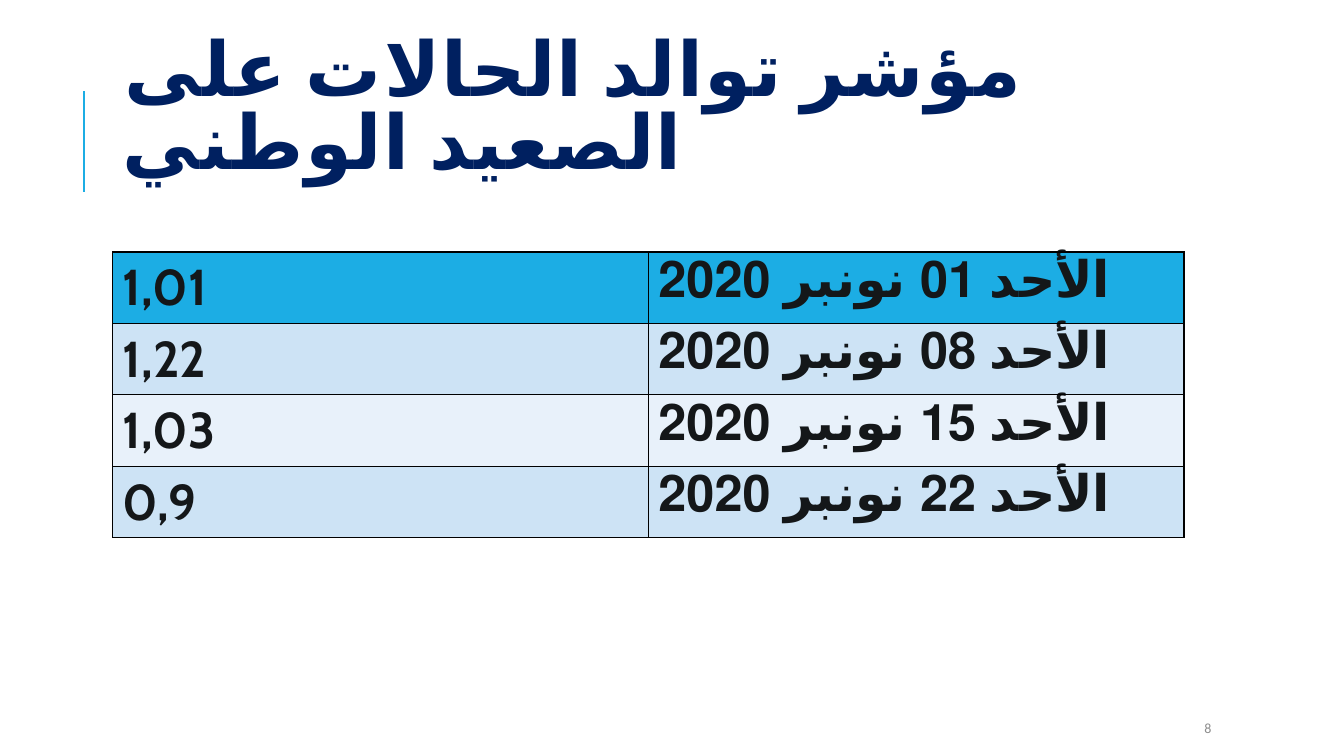
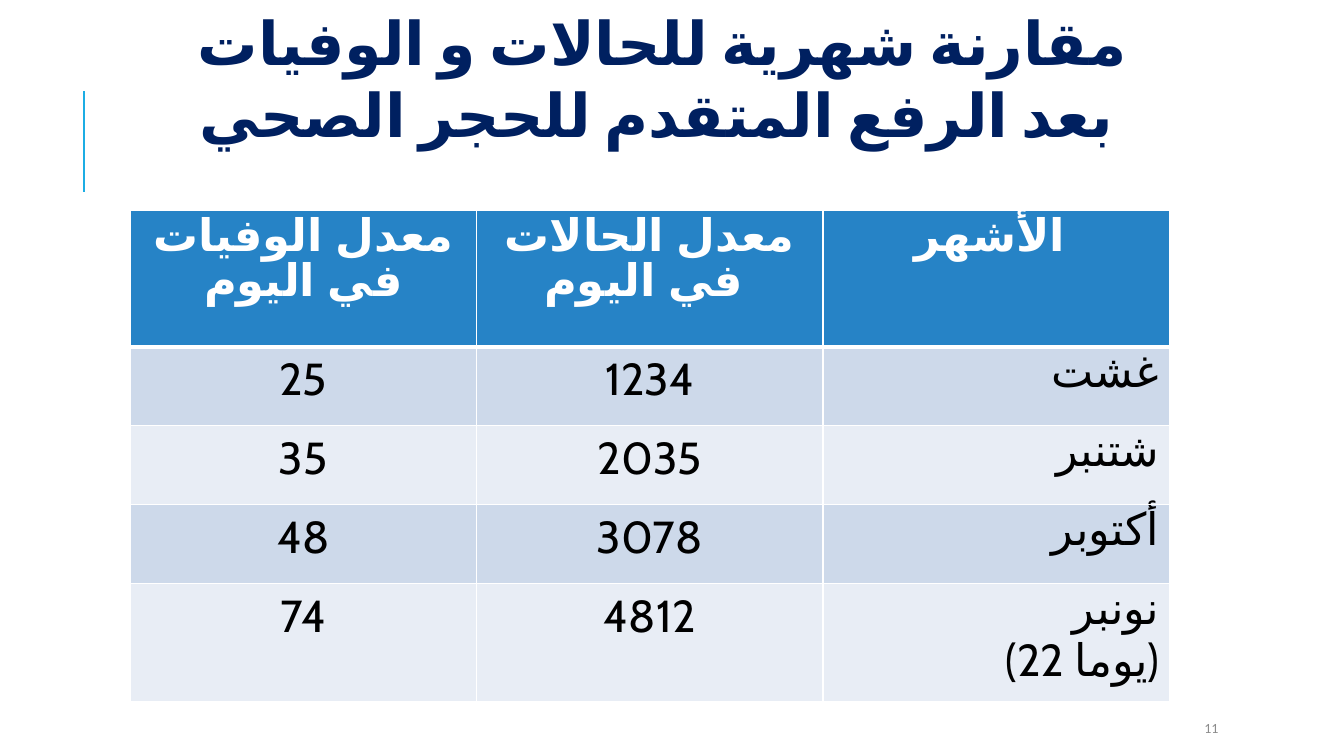
from lxml import etree
from pptx import Presentation
from pptx.dml.color import RGBColor
from pptx.enum.lang import MSO_LANGUAGE_ID
from pptx.enum.shapes import MSO_CONNECTOR
from pptx.enum.text import MSO_ANCHOR, MSO_AUTO_SIZE, PP_ALIGN
from pptx.oxml.ns import qn
from pptx.util import Cm, Pt

LEFT, CENTER, RIGHT = PP_ALIGN.LEFT, PP_ALIGN.CENTER, PP_ALIGN.RIGHT
TOP, MIDDLE = MSO_ANCHOR.TOP, MSO_ANCHOR.MIDDLE
STRAIGHT = MSO_CONNECTOR.STRAIGHT
ARABIC = MSO_LANGUAGE_ID.ARABIC_MOROCCO
COLORS = {
    "accent": "1CADE4", "title": "002060", "number": "8C8C8C",
    "ink": "141719", "black": "000000", "white": "FFFFFF",
    "sky": "CDE3F5", "pale_sky": "E8F1FA",
    "header": "2683C6", "band": "CDD9EA", "pale_band": "E8EDF5",
}


def style(p, font, size, color, bold=False, align=LEFT):
    p.alignment = align
    for r in p.runs:
        r.font.name = font
        r.font.size = Pt(size)
        r.font.bold = bold
        r.font.color.rgb = RGBColor.from_string(COLORS[color])
        r.font.language_id = ARABIC


def fill_cell(cell, text, fill, border, bottom=1):
    cell.text = text
    tcPr = cell._tc.get_or_add_tcPr()
    for side, width in (("L", 1), ("R", 1), ("T", 1), ("B", bottom)):
        ln = etree.SubElement(tcPr, qn(f"a:ln{side}"), w=str(Pt(width)))
        solid = etree.SubElement(ln, qn("a:solidFill"))
        etree.SubElement(solid, qn("a:srgbClr"), val=COLORS[border])
    cell.fill.solid()
    cell.fill.fore_color.rgb = RGBColor.from_string(COLORS[fill])


prs = Presentation()
prs.slide_width, prs.slide_height = Cm(33.87), Cm(19.05)

pages = [
    ("مؤشر توالد الحالات على الصعيد الوطني", "8", "Calibri", 54, LEFT, MIDDLE,
     (2.84, 1.63, 27, 4.17)),
    ("مقارنة شهرية للحالات و الوفيات بعد الرفع المتقدم للحجر الصحي", "11", "Cabin", 43, CENTER, TOP,
     (3.99, 0, 25.88, 3.94)),
]
for title, number, font, size, align, anchor, box in pages:
    s = prs.slides.add_slide(prs.slide_layouts[5])

    rule = s.shapes.add_connector(STRAIGHT, Cm(2.11), Cm(4.83), Cm(2.11), Cm(2.29))
    rule.line.color.rgb = RGBColor.from_string(COLORS["accent"])
    rule.line.width = Pt(1.5)
    etree.SubElement(rule._element.spPr, qn("a:effectLst"))

    sp = s.shapes.title
    sp.left, sp.top, sp.width, sp.height = [Cm(v) for v in box]
    tf = sp.text_frame
    tf.text = title
    tf.word_wrap = True
    tf.auto_size = MSO_AUTO_SIZE.NONE
    tf.vertical_anchor = anchor
    style(tf.paragraphs[0], font, size, "title", True, align)
    rPr = tf.paragraphs[0].runs[0]._r.get_or_add_rPr()
    etree.SubElement(rPr, qn("a:cs"), typeface=font)

    sp = s.shapes.add_textbox(Cm(30.1), Cm(17.96), Cm(2.69), Cm(0.76))
    tf = sp.text_frame
    tf.text = number
    tf.word_wrap = True
    tf.vertical_anchor = MIDDLE
    style(tf.paragraphs[0], "Calibri", 10, "number")

index_slide, months_slide = prs.slides

tf = index_slide.shapes.title.text_frame
tf.margin_bottom = Cm(1.96)
p = tf.paragraphs[0]
p.line_spacing = 0.8
p.runs[0]._r.get_or_add_rPr().set("spc", "100")

pPr = months_slide.shapes.title.text_frame.paragraphs[0]._p.get_or_add_pPr()
pPr.set("rtl", "1")
pPr.set("marL", str(Cm(0.76)))
pPr.set("indent", str(Cm(-0.28)))

index_rows = [
    ("1,01", "الأحد 01 نونبر 2020"),
    ("1,22", "الأحد 08 نونبر 2020"),
    ("1,03", "الأحد 15 نونبر 2020"),
    ("0,9", "الأحد 22 نونبر 2020"),
]
table = index_slide.shapes.add_table(4, 2, Cm(2.84), Cm(6.35), Cm(27), Cm(7.2)).table
for i, row in enumerate(index_rows):
    fill = "accent" if i == 0 else "sky" if i % 2 else "pale_sky"
    for j, text in enumerate(row):
        cell = table.cell(i, j)
        fill_cell(cell, text, fill, "black")
        style(cell.text_frame.paragraphs[0], "Cabin", 36, "ink", True)

month_rows = [
    ("معدل الوفيات في اليوم", "معدل الحالات في اليوم ", "الأشهر "),
    ("25", "1234", "غشت"),
    ("35", "2035", "شتنبر"),
    ("48", "3078", "أكتوبر"),
    ("74", "4812", "نونبر\n(22 يوما)"),
]
heights = [3.43, 1.99, 1.99, 1.99, 2.95]
table = months_slide.shapes.add_table(5, 3, Cm(3.28), Cm(5.31), Cm(26.19), Cm(sum(heights))).table
for i, row in enumerate(month_rows):
    table.rows[i].height = Cm(heights[i])
    is_header = i == 0
    fill = "header" if is_header else "band" if i % 2 else "pale_band"
    for j, text in enumerate(row):
        cell = table.cell(i, j)
        fill_cell(cell, text, fill, "white", 3 if is_header else 1)
        align = RIGHT if j == 2 and not is_header else CENTER
        for p in cell.text_frame.paragraphs:
            style(p, "Cabin", 32, "white" if is_header else "black", is_header, align)

prs.save("out.pptx")
